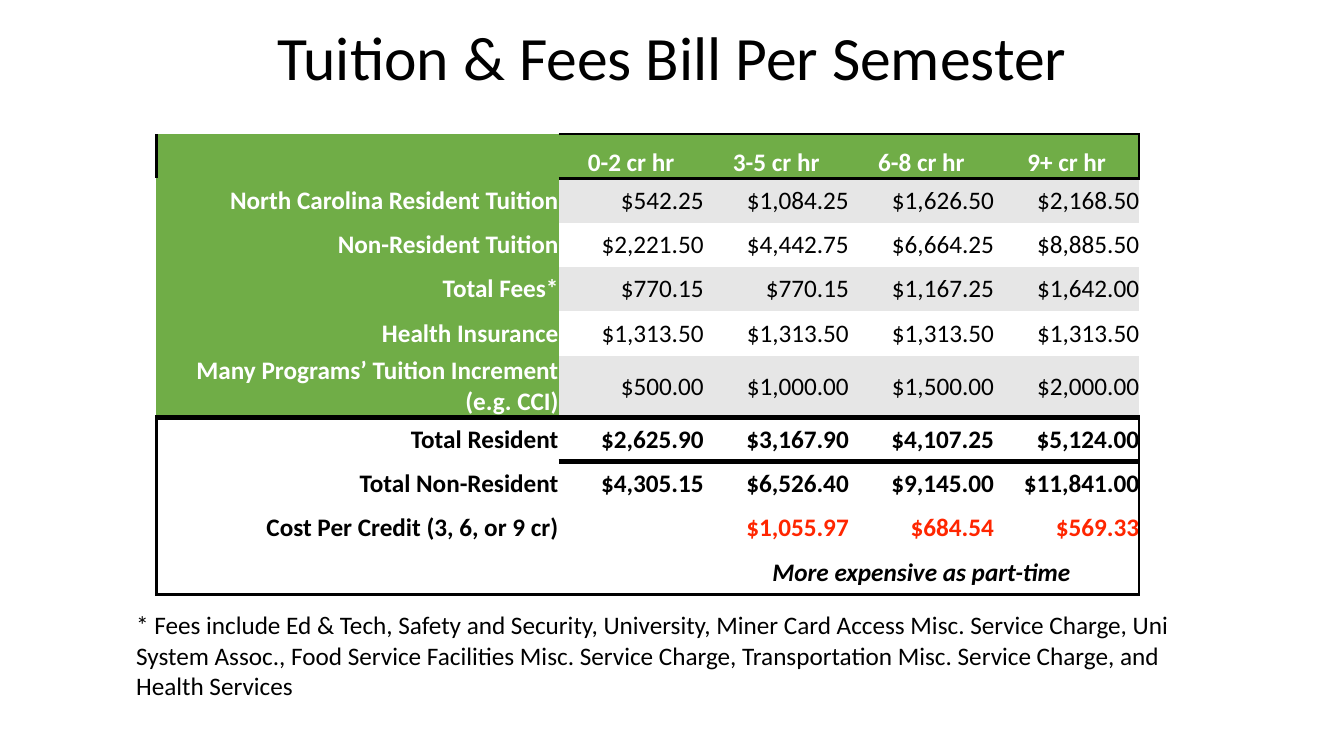
"""Build the slide with the tuition and fees table."""
from dataclasses import dataclass
from typing import Optional

from lxml.etree import SubElement
from pptx import Presentation
from pptx.dml.color import RGBColor
from pptx.enum.text import MSO_ANCHOR, PP_ALIGN
from pptx.oxml.ns import qn
from pptx.util import Inches, Pt

FONT = "Calibri"
GREEN = RGBColor(0x70, 0xAD, 0x47)
GRAY = RGBColor(0xE6, 0xE6, 0xE6)
WHITE = RGBColor(0xFF, 0xFF, 0xFF)
BLACK = RGBColor(0x00, 0x00, 0x00)
RED = RGBColor(0xFF, 0x26, 0x00)


@dataclass(frozen=True)
class Style:
    size: int = 18
    color: RGBColor = BLACK
    bold: bool = False
    italic: bool = False
    align: PP_ALIGN = PP_ALIGN.RIGHT
    anchor: MSO_ANCHOR = MSO_ANCHOR.MIDDLE


@dataclass(frozen=True)
class FeeRow:
    texts: tuple[str, ...]
    label_style: Style
    value_style: Style
    label_fill: RGBColor
    value_fill: RGBColor


@dataclass(frozen=True)
class Rule:
    width: int
    first_column: int


@dataclass(frozen=True)
class TextBox:
    text: str
    left: float
    top: float
    width: float
    height: float
    style: Style
    line_spacing: float


HEADER = Style(color=WHITE, bold=True, align=PP_ALIGN.CENTER, anchor=MSO_ANCHOR.BOTTOM)
LABEL = Style(color=WHITE, bold=True)
AMOUNT = Style()
TOTAL = Style(bold=True)
PER_CREDIT = Style(color=RED, bold=True)
REMARK = Style(bold=True, italic=True, align=PP_ALIGN.CENTER)

FEE_ROWS = (
    FeeRow(("", "0-2 cr hr", "3-5 cr hr", "6-8 cr hr", "9+ cr hr"), HEADER, HEADER, GREEN, GREEN),
    FeeRow(("North Carolina Resident Tuition", "$542.25", "$1,084.25", "$1,626.50", "$2,168.50"),
           LABEL, AMOUNT, GREEN, GRAY),
    FeeRow(("Non-Resident Tuition", "$2,221.50", "$4,442.75", "$6,664.25", "$8,885.50"),
           LABEL, AMOUNT, GREEN, WHITE),
    FeeRow(("Total Fees*", "$770.15", "$770.15", "$1,167.25", "$1,642.00"),
           LABEL, AMOUNT, GREEN, GRAY),
    FeeRow(("Health Insurance", "$1,313.50", "$1,313.50", "$1,313.50", "$1,313.50"),
           LABEL, AMOUNT, GREEN, WHITE),
    FeeRow(("Many Programs’ Tuition Increment (e.g. CCI)",
            "$500.00", "$1,000.00", "$1,500.00", "$2,000.00"), LABEL, AMOUNT, GREEN, GRAY),
    FeeRow(("Total Resident", "$2,625.90", "$3,167.90", "$4,107.25", "$5,124.00"),
           TOTAL, TOTAL, WHITE, WHITE),
    FeeRow(("Total Non-Resident", "$4,305.15", "$6,526.40", "$9,145.00", "$11,841.00"),
           TOTAL, TOTAL, WHITE, WHITE),
    FeeRow(("Cost Per Credit (3, 6, or 9 cr)", "", "$1,055.97", "$684.54", "$569.33"),
           TOTAL, PER_CREDIT, WHITE, WHITE),
    FeeRow(("", "", "More expensive as part-time", "", ""), TOTAL, REMARK, WHITE, WHITE),
)
COLUMN_WIDTHS = (3.99, 1.44, 1.44, 1.44, 1.44)
ROW_HEIGHT = 0.44
TALL_ROW, TALL_HEIGHT = 5, 0.61
LAST_ROW, LAST_COLUMN = len(FEE_ROWS) - 1, len(COLUMN_WIDTHS) - 1
REMARK_COLUMN = 2
RULES = {0: Rule(2, 1), 1: Rule(2, 1), 6: Rule(4, 0), 7: Rule(4, 1), 10: Rule(2, 0)}
OUTLINED_ROWS = (0, 6, 7, 8, 9)
OUTLINE_WIDTH = 2

TEXT_BOXES = (
    TextBox("Tuition & Fees Bill Per Semester", 0.92, -0.12, 11.5, 1.45,
            Style(size=44, align=PP_ALIGN.CENTER), 0.9),
    TextBox("* Fees include Ed & Tech, Safety and Security, University, Miner Card Access Misc. "
            "Service Charge, Uni System Assoc., Food Service Facilities Misc. Service Charge, "
            "Transportation Misc. Service Charge, and Health Services", 1.3, 6, 10.73, 0.98,
            Style(align=PP_ALIGN.LEFT, anchor=MSO_ANCHOR.TOP), 1.0),
)


def format_paragraph(para, style: Style) -> None:
    """Apply a style to a paragraph and its runs."""
    para.alignment = style.align
    for font in (para.font, *(span.font for span in para.runs)):
        font.name = FONT
        font.size = Pt(style.size)
        font.bold = style.bold
        font.italic = style.italic
        font.color.rgb = style.color


def add_text_box(page, item: TextBox) -> None:
    """Place one wrapped text box on the page."""
    box = page.shapes.add_textbox(Inches(item.left), Inches(item.top),
                                  Inches(item.width), Inches(item.height))
    frame = box.text_frame
    frame.word_wrap = True
    frame.vertical_anchor = item.style.anchor
    frame.margin_left = frame.margin_right = Inches(0.05)
    frame.margin_top = frame.margin_bottom = Inches(0.05)
    frame.text = item.text
    frame.paragraphs[0].line_spacing = item.line_spacing
    format_paragraph(frame.paragraphs[0], item.style)


def add_border(cell, side: str, width: Optional[int]) -> None:
    """Draw one cell edge, or clear it when there is no width."""
    properties = cell._tc.get_or_add_tcPr()
    line = SubElement(properties, qn(f"a:ln{side}"), w=str(Pt(width or 0)))
    if width is None:
        SubElement(line, qn("a:noFill"))
    else:
        fill = SubElement(line, qn("a:solidFill"))
        SubElement(fill, qn("a:srgbClr"), val=str(BLACK))


def rule_width(boundary: int, column: int) -> Optional[int]:
    """Return the width of the horizontal rule at a row boundary."""
    rule = RULES.get(boundary)
    return rule.width if rule and column >= rule.first_column else None


def fill_cell(cell, row: int, column: int) -> None:
    """Write, border and colour one table cell."""
    fee_row = FEE_ROWS[row]
    style = fee_row.value_style if column else fee_row.label_style
    outline = OUTLINE_WIDTH if row in OUTLINED_ROWS else None
    at_right = column == LAST_COLUMN or cell.is_merge_origin
    add_border(cell, "L", outline if column == 0 else None)
    add_border(cell, "R", outline if at_right else None)
    add_border(cell, "T", rule_width(row, column))
    add_border(cell, "B", rule_width(row + 1, column))
    cell.fill.solid()
    cell.fill.fore_color.rgb = fee_row.value_fill if column else fee_row.label_fill
    cell.margin_left = cell.margin_right = cell.margin_top = cell.margin_bottom = 0
    cell.vertical_anchor = style.anchor
    cell.text_frame.text = fee_row.texts[column]
    format_paragraph(cell.text_frame.paragraphs[0], style)


def add_fee_table(page) -> None:
    """Place the table of tuition and fees on the page."""
    frame = page.shapes.add_table(len(FEE_ROWS), len(COLUMN_WIDTHS), Inches(1.55), Inches(1.33),
                                  Inches(sum(COLUMN_WIDTHS)), Inches(4.6))
    table = frame.table
    table.first_row = table.horz_banding = False
    for column, width in enumerate(COLUMN_WIDTHS):
        table.columns[column].width = Inches(width)
    table.cell(LAST_ROW, REMARK_COLUMN).merge(table.cell(LAST_ROW, LAST_COLUMN))
    for row in range(len(FEE_ROWS)):
        table.rows[row].height = Inches(TALL_HEIGHT if row == TALL_ROW else ROW_HEIGHT)
        for column in range(len(COLUMN_WIDTHS)):
            fill_cell(table.cell(row, column), row, column)


def main() -> None:
    """Build and save the deck."""
    deck = Presentation()
    deck.slide_width, deck.slide_height = Inches(13.33), Inches(7.5)
    page = deck.slides.add_slide(deck.slide_layouts[6])
    add_fee_table(page)
    for item in TEXT_BOXES:
        add_text_box(page, item)
    deck.save("out.pptx")


if __name__ == "__main__":
    main()
